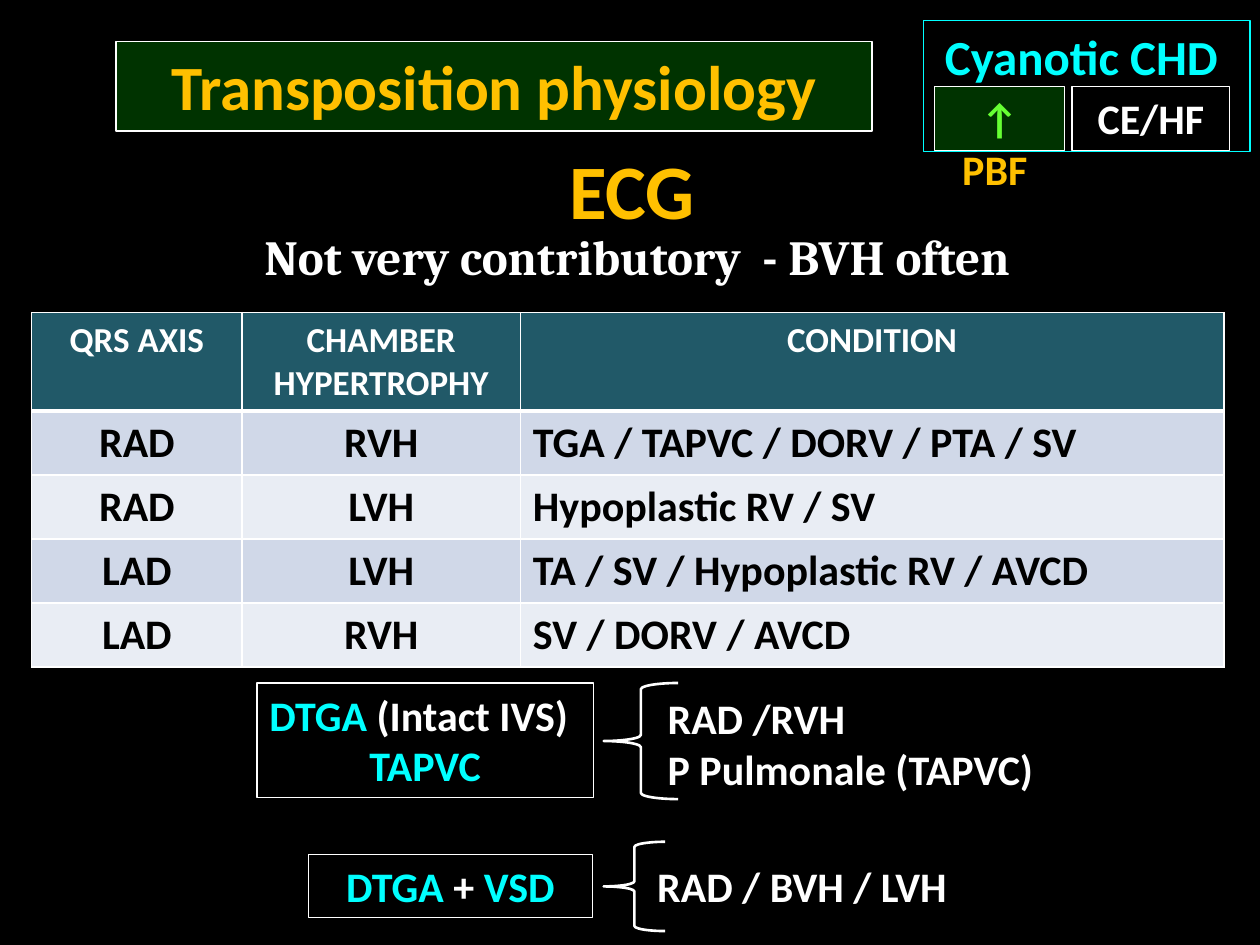
"""Build the slide on ECG findings in transposition physiology."""
from lxml import etree
from pptx import Presentation
from pptx.dml.color import RGBColor
from pptx.enum import shapes, text
from pptx.oxml import ns
from pptx.util import Cm, Pt

BLACK = RGBColor(0x00, 0x00, 0x00)
WHITE = RGBColor(0xFF, 0xFF, 0xFF)
CYAN = RGBColor(0x00, 0xFF, 0xFF)
AMBER = RGBColor(0xFF, 0xC0, 0x00)
LIME = RGBColor(0x66, 0xFF, 0x33)
DARK_GREEN = RGBColor(0x00, 0x33, 0x00)
TEAL = RGBColor(0x21, 0x59, 0x68)
BAND_DARK = RGBColor(0xD0, 0xD8, 0xE8)
BAND_LIGHT = RGBColor(0xE9, 0xED, 0xF4)

LEFT, CENTER = text.PP_ALIGN.LEFT, text.PP_ALIGN.CENTER

FINDINGS = [
    ("QRS AXIS", "CHAMBER HYPERTROPHY", "CONDITION"),
    ("RAD", "RVH", "TGA / TAPVC / DORV / PTA / SV"),
    ("RAD", "LVH", "Hypoplastic RV / SV"),
    ("LAD", "LVH", "TA / SV / Hypoplastic RV / AVCD"),
    ("LAD", "RVH", "SV / DORV / AVCD"),
]
COLUMN_WIDTHS = (4.24, 5.61, 14.18)
HEADER_HEIGHT, ROW_HEIGHT = 1.98, 1.29


def style_font(paragraph, size, name="Calibri"):
    """Set the bold font that all runs of a paragraph share."""
    paragraph.font.size = Pt(size)
    paragraph.font.name = name
    paragraph.font.bold = True


def write_lines(box, lines, size, name="Calibri", wrap=True):
    """Write lines, each an alignment and a list of coloured spans."""
    frame = box.text_frame
    frame.word_wrap = wrap
    frame.vertical_anchor = text.MSO_ANCHOR.TOP
    for index, (alignment, spans) in enumerate(lines):
        paragraph = frame.add_paragraph() if index else frame.paragraphs[0]
        paragraph.alignment = alignment
        style_font(paragraph, size, name)
        for words, color in spans:
            span = paragraph.add_run()
            span.text = words
            span.font.color.rgb = color


def add_label(page, place, lines, size, **options):
    """Add text without an outline."""
    box = page.shapes.add_textbox(*map(Cm, place))
    write_lines(box, lines, size, **options)


def add_outline(page, kind, place, line=WHITE, width=0.75, fill=None):
    """Add a preset shape with a line and an optional fill."""
    shape = page.shapes.add_shape(kind, *map(Cm, place))
    shape.shadow.inherit = False
    shape.line.color.rgb = line
    shape.line.width = Pt(width)
    if fill is None:
        shape.fill.background()
    else:
        shape.fill.solid()
        shape.fill.fore_color.rgb = fill
    return shape


def add_box(page, place, lines, size, line=WHITE, fill=None, wrap=True):
    """Add a rectangle that holds text."""
    box = add_outline(page, shapes.MSO_SHAPE.RECTANGLE, place, line, fill=fill)
    write_lines(box, lines, size, wrap=wrap)


def add_brace(page, place):
    """Add a left brace."""
    add_outline(page, shapes.MSO_SHAPE.LEFT_BRACE, place, width=1.5)


def set_borders(cell, top, bottom):
    """Draw white cell borders, with the top and bottom widths in points."""
    properties = cell._tc.get_or_add_tcPr()
    widths = {"a:lnL": 1, "a:lnR": 1, "a:lnT": top, "a:lnB": bottom}
    for position, (tag, width) in enumerate(widths.items()):
        border = etree.Element(ns.qn(tag), w=str(Pt(width)))
        fill = etree.SubElement(border, ns.qn("a:solidFill"))
        etree.SubElement(fill, ns.qn("a:srgbClr"), val=str(WHITE))
        properties.insert(position, border)


def add_findings(page):
    """Add the table of axis, hypertrophy and condition."""
    height = HEADER_HEIGHT + ROW_HEIGHT * (len(FINDINGS) - 1)
    place = (0.64, 6.3, sum(COLUMN_WIDTHS), height)
    table = page.shapes.add_table(
        len(FINDINGS), len(COLUMN_WIDTHS), *map(Cm, place)).table
    for column, width in zip(table.columns, COLUMN_WIDTHS):
        column.width = Cm(width)
    for r, values in enumerate(FINDINGS):
        header = r == 0
        table.rows[r].height = Cm(HEADER_HEIGHT if header else ROW_HEIGHT)
        for c, value in enumerate(values):
            cell = table.cell(r, c)
            cell.text = value
            cell.fill.solid()
            cell.fill.fore_color.rgb = (
                TEAL if header else BAND_DARK if r % 2 else BAND_LIGHT)
            set_borders(cell, 3 if r == 1 else 1, 3 if header else 1)
            paragraph = cell.text_frame.paragraphs[0]
            paragraph.alignment = CENTER if header or c < 2 else LEFT
            style_font(paragraph, 20 if header else 24)
            paragraph.font.color.rgb = WHITE if header else BLACK


def add_headings(page):
    """Add the title, the corner panel and the two headings."""
    add_box(page, (2.34, 0.84, 15.24, 1.8),
            [(CENTER, [("Transposition physiology", AMBER)])], 36,
            fill=DARK_GREEN)
    add_box(page, (18.62, 0.42, 6.58, 2.64),
            [(CENTER, [("Cyanotic CHD ", CYAN)])], 28, line=CYAN, fill=BLACK)
    add_box(page, (18.84, 1.75, 2.62, 1.28),
            [(CENTER, [("↑ ", LIME), ("PBF ", AMBER)])], 24, fill=DARK_GREEN)
    add_box(page, (21.61, 1.75, 3.18, 1.28),
            [(CENTER, [("CE/HF", WHITE)])], 24, fill=BLACK)
    add_label(page, (11.15, 2.74, 3.18, 2.13),
              [(CENTER, [("ECG", AMBER)])], 44, wrap=False)
    add_label(page, (5.08, 4.45, 16.03, 1.45),
              [(LEFT, [("Not very contributory  - BVH often", WHITE)])], 28,
              name="Cambria", wrap=False)


def add_lesions(page):
    """Add the two lesions with their braced ECG findings."""
    add_box(page, (5.18, 13.77, 6.78, 2.31),
            [(LEFT, [("DTGA", CYAN), (" (Intact IVS)", WHITE)]),
             (CENTER, [("TAPVC", CYAN)])], 24, wrap=False)
    add_brace(page, (12.17, 13.77, 1.5, 2.34))
    add_label(page, (13.21, 13.84, 7.95, 2.31),
              [(LEFT, [("RAD /RVH", WHITE)]),
               (LEFT, [("P Pulmonale (TAPVC)", WHITE)])], 24, wrap=False)
    add_box(page, (6.22, 17.22, 5.72, 1.28),
            [(CENTER, [("DTGA ", CYAN), ("+ ", WHITE), ("VSD", CYAN)])], 24)
    add_brace(page, (12.17, 16.97, 1.24, 1.8))
    add_label(page, (13, 17.22, 6.99, 1.28),
              [(LEFT, [("RAD / BVH / LVH", WHITE)])], 24)


def main():
    """Build and save the deck."""
    deck = Presentation()
    deck.slide_width, deck.slide_height = Cm(25.4), Cm(19.05)
    page = deck.slides.add_slide(deck.slide_layouts[6])
    page.background.fill.solid()
    page.background.fill.fore_color.rgb = BLACK
    add_findings(page)
    add_headings(page)
    add_lesions(page)
    deck.save("out.pptx")


if __name__ == "__main__":
    main()
